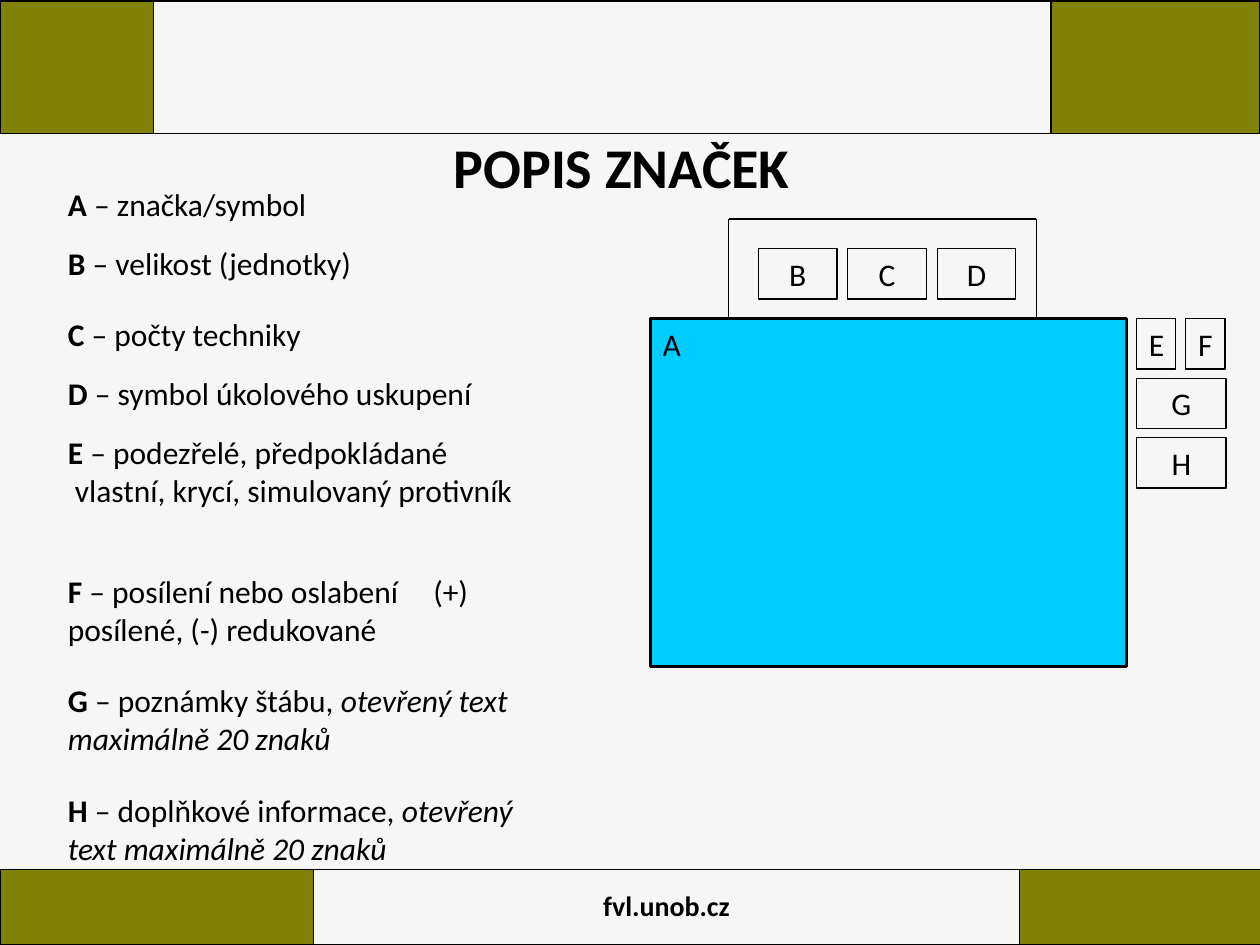
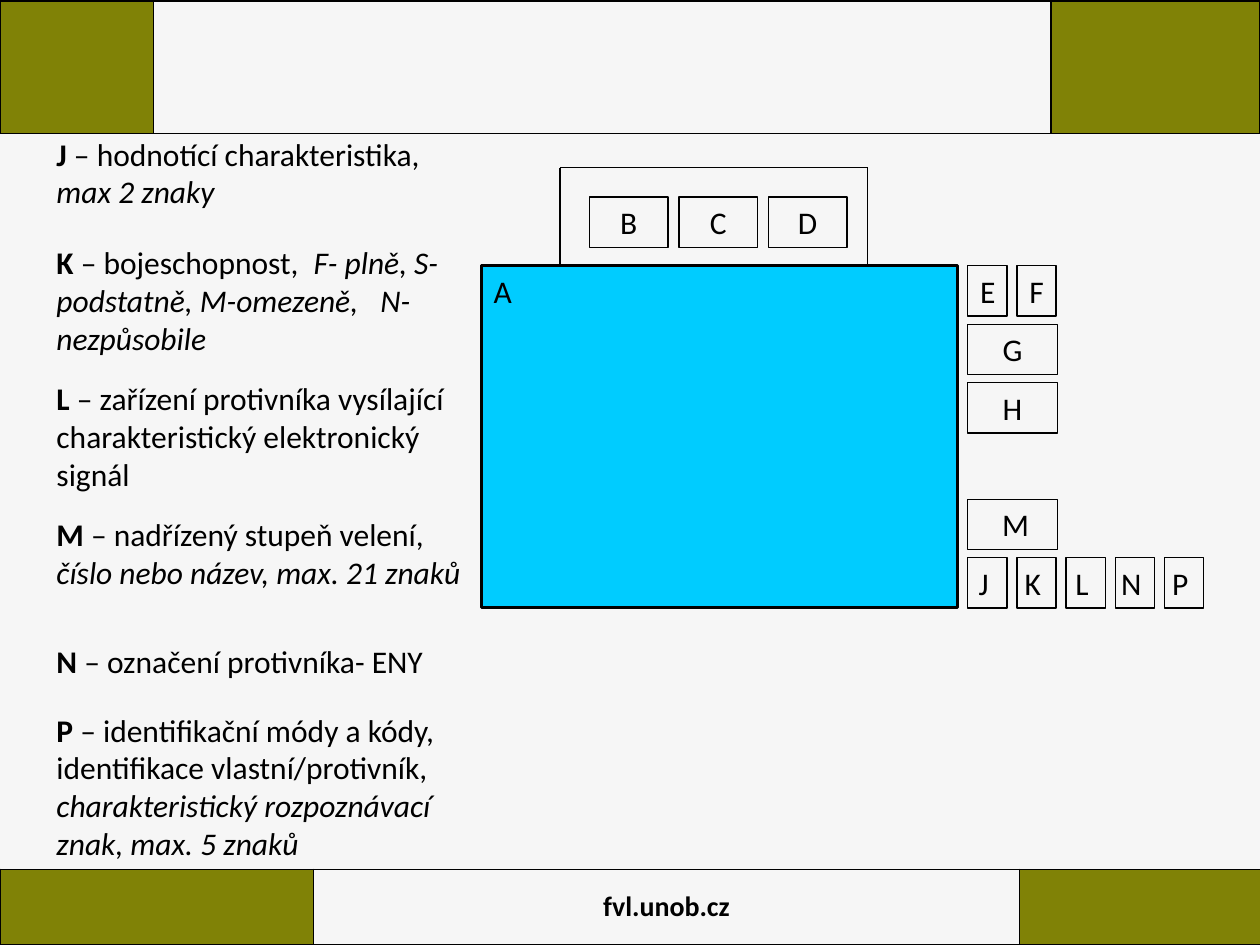
from lxml import etree
from pptx import Presentation, util as u
from pptx.enum import shapes, text
from pptx.dml.color import RGBColor
from pptx.oxml import ns

COLORS = {"paper": "F6F6F6", "olive": "808206", "symbol": "00CCFF", "ink": "000000"}
RGB = {name: RGBColor.from_string(value) for name, value in COLORS.items()}
FONT = "Calibri"
WIDTH, HEIGHT = 10, 7.5
COL = 0.39           # column of the symbol diagram
LABEL_HEIGHT = 0.4
NARROW, MEDIUM, WIDE = 0.8 * COL, 1.6 * COL, 1.82 * COL
BODY, FOOTER, TITLE = 18, 16, 32

BANDS = [  # top, row height, column widths, middle text
    (0.92 * HEIGHT, 0.08 * HEIGHT, (2.49, 5.6, 1.92), "fvl.unob.cz"),
    (0.01, 0.14 * HEIGHT, (1.22, 7.12, 1.66), ""),
]

# Labels: letter, column, row, width, left inset, right inset
SHARED_LABELS = [
    *[(letter, 2.2 + 1.82 * i, -1.18, MEDIUM, 0.1, 0.1) for i, letter in enumerate("BCD")],
    ("E", 9.9, 0, NARROW, 0.1, 0.1), ("F", 10.9, 0, NARROW, 0.1, 0.1),
    ("G", 9.9, 1, WIDE, 0.1, 0.1), ("H", 9.9, 2, WIDE, 0.1, 0.1),
]
LOWER_LABELS = [
    ("M", 9.9, 4, WIDE, 0.1, 0.05),
    *[(letter, 9.9 + i, 5, NARROW, 0.04, 0.1) for i, letter in enumerate("JKLNP")],
]

# Notes: top, tab stops, spans of (words, style); "br" breaks the line
PAGES = [
    {
        "title": "POPIS ZNAČEK",
        "symbol": (5.16, 2.53, 2.76),
        "labels": SHARED_LABELS,
        "notes_left": 0.44, "notes_width": 3.78,
        "notes": [
            (1.42, (), [("A", "b"), (" – značka/symbol", "")]),
            (1.89, (), [("B ", "b"), ("– velikost (jednotky)", "")]),
            (2.45, (), [("C", "b"), (" – počty techniky", "")]),
            (2.92, (), [("D", "b"), (" – symbol úkolového uskupení", "")]),
            (3.39, (), [("E", "b"), (" – podezřelé, předpokládané", ""), ("", "br"),
                        (" vlastní, krycí, simulovaný protivník", "")]),
            (4.49, (2.9,), [("F", "b"), (" – posílení nebo oslabení\t(+) posílené, (-) redukované", "")]),
            (5.36, (), [("G", "b"), (" – poznámky štábu, ", ""),
                        ("otevřený text maximálně 20 znaků", "i")]),
            (6.23, (), [("H", "b"), (" – doplňkové informace, ", ""),
                        ("otevřený text maximálně 20 znaků", "i")]),
        ],
    },
    {
        "title": "",
        "symbol": (3.82, 2.11, 2.71),
        "labels": SHARED_LABELS + LOWER_LABELS,
        "notes_left": 0.35, "notes_width": 3.54,
        "notes": [
            (1.02, (), [("J", "b"), (" – hodnotící charakteristika, ", ""), ("max 2 znaky", "i")]),
            (1.88, (2.04, 2.57), [("K", "b"), (" – bojeschopnost,\t", ""),
                                  ("F- plně, S-podstatně, M-omezeně,\tN-nezpůsobile", "i")]),
            (2.96, (), [("L", "b"),
                        (" – zařízení protivníka vysílající charakteristický elektronický signál", "")]),
            (4.04, (), [("M", "b"), (" – nadřízený stupeň velení, ", ""),
                        ("číslo nebo název, max. 21 znaků", "i")]),
            (5.05, (), [("N", "b"), (" – označení protivníka- ENY", "")]),
            (5.59, (), [("P", "b"), (" – identifikační módy a kódy, identifikace vlastní/protivník, ", ""),
                        ("charakteristický rozpoznávací znak, max. 5 znaků", "i")]),
        ],
    },
]


def write(frame, spans, size=BODY, align=text.PP_ALIGN.LEFT, tabs=()):
    """Fill the first paragraph of a text frame with styled runs."""
    frame.word_wrap = True
    frame.vertical_anchor = text.MSO_ANCHOR.TOP
    para = frame.paragraphs[0]
    para.alignment = align
    if tabs:
        stops = etree.SubElement(para._p.get_or_add_pPr(), ns.qn("a:tabLst"))
        for tab in tabs:
            etree.SubElement(stops, ns.qn("a:tab"), pos=str(u.Inches(tab)), algn="l")
    for words, style in spans:
        if style == "br":
            para.add_line_break()
            continue
        span = para.add_run()
        span.text = words
        span.font.name, span.font.size = FONT, u.Pt(size)
        span.font.bold, span.font.italic = style == "b", style == "i"
        span.font.color.rgb = RGB["ink"]


def add_rect(page, left, top, width, height, line_width):
    rect = page.shapes.add_shape(shapes.MSO_SHAPE.RECTANGLE, u.Inches(left), u.Inches(top),
                                 u.Inches(width), u.Inches(height))
    rect.shadow.inherit = False
    rect.fill.background()
    rect.line.color.rgb = RGB["ink"]
    rect.line.width = u.Pt(line_width)
    return rect


deck = Presentation()
deck.slide_width, deck.slide_height = u.Inches(WIDTH), u.Inches(HEIGHT)

for content in PAGES:
    page = deck.slides.add_slide(deck.slide_layouts[6])
    page.background.fill.solid()
    page.background.fill.fore_color.rgb = RGB["paper"]

    for top, height, widths, words in BANDS:
        band = page.shapes.add_table(1, 3, 0, u.Inches(top), u.Inches(sum(widths)), u.Inches(height)).table
        band.first_row = band.horz_banding = False
        band.rows[0].height = u.Inches(height)
        for i, width in enumerate(widths):
            band.columns[i].width = u.Inches(width)
            cell = band.cell(0, i)
            borders = cell._tc.get_or_add_tcPr()
            for side in ("lnL", "lnR", "lnT", "lnB"):
                edge = etree.SubElement(borders, ns.qn("a:" + side), w=str(u.Pt(1)))
                paint = etree.SubElement(edge, ns.qn("a:solidFill"))
                etree.SubElement(paint, ns.qn("a:srgbClr"), val=COLORS["ink"])
            if i == 1:
                cell.fill.background()
            else:
                cell.fill.solid()
                cell.fill.fore_color.rgb = RGB["olive"]
        if words:
            middle = band.cell(0, 1)
            write(middle.text_frame, [(words, "b")], FOOTER, text.PP_ALIGN.CENTER)
            middle.vertical_anchor = text.MSO_ANCHOR.MIDDLE

    left, top, height = content["symbol"]
    row = height / 5.85
    symbol = add_rect(page, left, top, 9.7 * COL, height, 1.75)
    symbol.fill.solid()
    symbol.fill.fore_color.rgb = RGB["symbol"]
    write(symbol.text_frame, [("A", "")])

    bracket = [(1.6, 0), (1.6, -1.68), (7.86, -1.68), (7.86, 0)]
    corners = [(u.Inches(left + x * COL), u.Inches(top + y * row)) for x, y in bracket]
    for start, end in zip(corners, corners[1:]):
        side = page.shapes.add_connector(shapes.MSO_CONNECTOR.STRAIGHT, *start, *end)
        side.line.color.rgb = RGB["ink"]
        side.line.width = u.Pt(0.75)
        etree.SubElement(side._element.spPr, ns.qn("a:effectLst"))

    for letter, x, y, width, inset_left, inset_right in content["labels"]:
        label = add_rect(page, left + x * COL, top + y * row, width, LABEL_HEIGHT, 0.75)
        frame = label.text_frame
        frame.margin_left, frame.margin_right = u.Inches(inset_left), u.Inches(inset_right)
        write(frame, [(letter, "")], align=text.PP_ALIGN.CENTER)

    if content["title"]:
        title = page.shapes.add_textbox(u.Inches(0.88), u.Inches(1), u.Inches(8.11), u.Inches(0.63))
        write(title.text_frame, [(content["title"], "b")], TITLE, text.PP_ALIGN.CENTER)

    note_tops = [note[0] for note in content["notes"]] + [0.92 * HEIGHT]
    for (note_top, tabs, spans), next_top in zip(content["notes"], note_tops[1:]):
        box = page.shapes.add_textbox(u.Inches(content["notes_left"]), u.Inches(note_top),
                                      u.Inches(content["notes_width"]), u.Inches(next_top - note_top))
        write(box.text_frame, spans, tabs=tabs)

deck.save("out.pptx")
